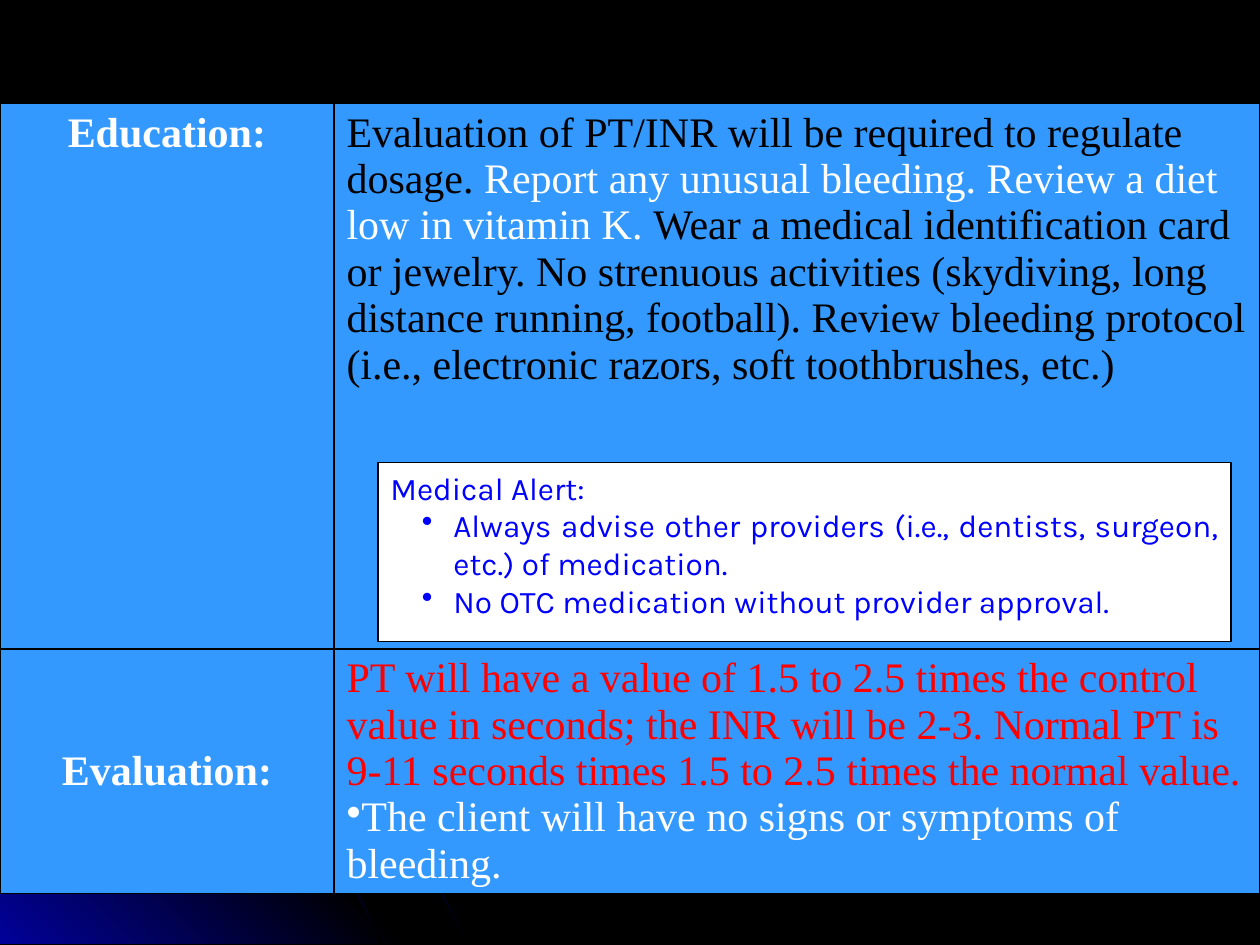
from copy import deepcopy

from lxml import etree
from pptx import Presentation
from pptx.dml.color import RGBColor
from pptx.enum.shapes import MSO_SHAPE
from pptx.enum.text import MSO_ANCHOR, PP_ALIGN
from pptx.oxml.ns import qn
from pptx.util import Inches, Pt

RECTANGLE = MSO_SHAPE.RECTANGLE
TOP, MIDDLE = MSO_ANCHOR.TOP, MSO_ANCHOR.MIDDLE
LEFT, CENTER, JUSTIFY = PP_ALIGN.LEFT, PP_ALIGN.CENTER, PP_ALIGN.JUSTIFY

COLORS = {
    "black": "000000",
    "white": "FFFFFF",
    "navy": "010199",
    "sky": "3399FF",
    "red": "FF0000",
    "blue": "0000FF",
}
HEADING = {"name": "Times New Roman", "size": Pt(24), "bold": True}
BODY = {**HEADING, "bold": False}
ALERT = {"name": "Karla", "size": Pt(18), "bold": False}

EDUCATION = [
    ("Evaluation of PT/INR will be required to regulate dosage.", "black"),
    (" Report any unusual bleeding. Review a diet low in vitamin K. ", "white"),
    ("Wear a medical identification card or jewelry. No strenuous activities "
     "(skydiving, long distance running, football). Review bleeding protocol "
     "(i.e., electronic razors, soft toothbrushes, etc.)", "black"),
]
TARGET = [
    ("PT will have a value of 1.5 to 2.5 times the control value in seconds; "
     "the INR will be 2-3. Normal PT is 9-11 seconds times 1.5 to 2.5 times "
     "the normal value.", "red"),
]
OUTCOME = [("The client will have no signs or symptoms of bleeding.", "white")]
ALERTS = [
    ("Always advise other providers (i.e., dentists, surgeon, etc.) of medication.", JUSTIFY),
    ("No OTC medication without provider approval.", LEFT),
]


def rgb(name):
    return RGBColor.from_string(COLORS[name])


def write(p, runs, style, align=LEFT):
    p.alignment = align
    for text, color in runs:
        r = p.add_run()
        r.text = text
        r.font.color.rgb = rgb(color)
        for key, value in style.items():
            setattr(r.font, key, value)


def add_bullet(p, margin=0, hanging=0):
    pPr = p._p.get_or_add_pPr()
    pPr.set("marL", str(Inches(margin)))
    pPr.set("indent", str(Inches(-hanging)))
    etree.SubElement(pPr, qn("a:buChar"), char="•")


def set_borders(cell, color, width):
    tcPr = cell._tc.get_or_add_tcPr()
    for i, side in enumerate(("lnL", "lnR", "lnT", "lnB")):
        ln = etree.Element(qn(f"a:{side}"), w=str(width))
        fill = etree.SubElement(ln, qn("a:solidFill"))
        etree.SubElement(fill, qn("a:srgbClr"), val=COLORS[color])
        tcPr.insert(i, ln)


def add_gradient_outline(s, points, colors, angle):
    scaled = [(Inches(x), Inches(y)) for x, y in points]
    builder = s.shapes.build_freeform(*scaled[0])
    builder.add_line_segments(scaled[1:])
    sp = builder.convert_to_shape()
    sp.shadow.inherit = False
    sp.line.fill.background()
    sp.fill.gradient()
    sp.fill.gradient_angle = angle
    stops = sp._element.spPr.find(f".//{qn('a:gsLst')}")
    stops.append(deepcopy(stops[0]))
    for i, (stop, color) in enumerate(zip(sp.fill.gradient_stops, colors)):
        stop.position = i / 2
        stop.color.rgb = rgb(color)


def curve(start, control, end, steps=14):
    return [
        tuple((1 - t) ** 2 * a + 2 * t * (1 - t) * b + t ** 2 * c
              for a, b, c in zip(start, control, end))
        for t in (i / steps for i in range(steps + 1))
    ]


def add_corner(s, bottom):
    def add_arc(start, control, end):
        outer = curve((0, start), control, (end, bottom))
        inner = curve((0, start + 0.02), control, (end - 0.02, bottom))
        add_gradient_outline(s, outer + inner[::-1], ("black", "navy", "black"), 315)

    add_arc(4.35, (2.31, 4.54), 3.72)
    triangle = [(3.22, bottom), (0, bottom), (0, 4.27)]
    add_gradient_outline(s, triangle, ("navy", "black", "navy"), 45)
    add_arc(4.75, (2.17, 5.4), 3.03)
    add_arc(4.42, (1.95, 4.93), 3.03)


def add_care_table(s, x, y, widths, heights):
    frame = s.shapes.add_table(2, 2, Inches(x), Inches(y),
                               Inches(sum(widths)), Inches(sum(heights)))
    table = frame.table
    table.first_row = table.horz_banding = False
    for column, width in zip(table.columns, widths):
        column.width = Inches(width)
    for row, height in zip(table.rows, heights):
        row.height = Inches(height)
    for cell in table.iter_cells():
        cell.fill.solid()
        cell.fill.fore_color.rgb = rgb("sky")
        set_borders(cell, "black", Pt(1))

    rows = (("Education:", TOP, [EDUCATION]), ("Evaluation:", MIDDLE, [TARGET, OUTCOME]))
    for i, (label, anchor, paragraphs) in enumerate(rows):
        heading, body = table.cell(i, 0), table.cell(i, 1)
        heading.vertical_anchor = anchor
        write(heading.text_frame.paragraphs[0], [(label, "white")], HEADING, CENTER)
        tf = body.text_frame
        for j, runs in enumerate(paragraphs):
            p = tf.add_paragraph() if j else tf.paragraphs[0]
            write(p, runs, BODY)
    add_bullet(p)


def add_alert_box(s, x, y, w, h):
    sp = s.shapes.add_shape(RECTANGLE, Inches(x), Inches(y), Inches(w), Inches(h))
    sp.shadow.inherit = False
    sp.fill.solid()
    sp.fill.fore_color.rgb = rgb("white")
    sp.line.color.rgb = rgb("black")
    sp.line.width = Pt(0.75)
    tf = sp.text_frame
    tf.word_wrap = True
    tf.vertical_anchor = TOP
    write(tf.paragraphs[0], [("Medical Alert:", "blue")], ALERT, JUSTIFY)
    for text, align in ALERTS:
        p = tf.add_paragraph()
        p.level = 1
        write(p, [(text, "blue")], ALERT, align)
        add_bullet(p, 0.5, 0.25)


def main():
    prs = Presentation()
    prs.slide_width, prs.slide_height = Inches(10), Inches(7.5)
    s = prs.slides.add_slide(prs.slide_layouts[6])
    s.background.fill.solid()
    s.background.fill.fore_color.rgb = rgb("black")
    add_corner(s, 7.49)
    add_care_table(s, 0, 0.82, (2.65, 7.35), (4.33, 1.94))
    add_alert_box(s, 3, 3.67, 6.77, 1.42)
    prs.save("out.pptx")


if __name__ == "__main__":
    main()
